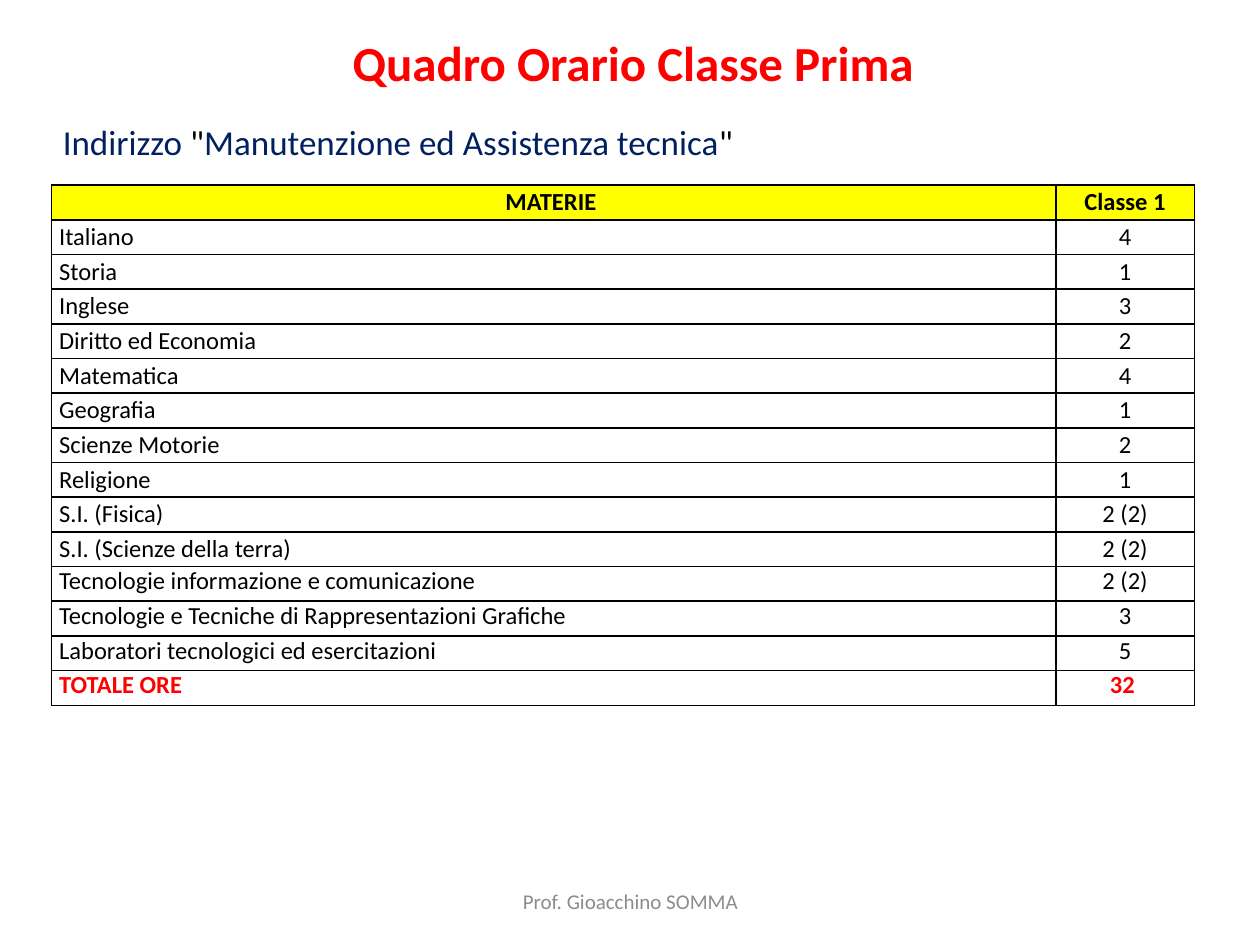
from lxml.etree import SubElement
from pptx import Presentation
from pptx.dml.color import RGBColor
from pptx.enum.text import MSO_ANCHOR, MSO_AUTO_SIZE, PP_ALIGN
from pptx.oxml.ns import qn
from pptx.util import Pt

# Content
TITLE = "Quadro Orario Classe Prima"
FOOTER = "Prof. Gioacchino SOMMA"
HEADER = ("MATERIE ", "Classe 1")
SUBJECTS = [
    ("Italiano", "4"),
    ("Storia", "1"),
    ("Inglese", "3"),
    ("Diritto ed Economia", "2"),
    ("Matematica", "4"),
    ("Geografia", "1"),
    ("Scienze Motorie", "2"),
    ("Religione", "1"),
    ("S.I. (Fisica)", "2 (2)"),
    ("S.I. (Scienze della terra)", "2 (2)"),
    ("Tecnologie informazione e comunicazione", "2 (2)"),
    ("Tecnologie e Tecniche di Rappresentazioni Grafiche", "3"),
    ("Laboratori tecnologici ed esercitazioni", "5"),
]
TOTAL = ("TOTALE ORE", "32 ")
FIRST_TOP_ROW = 11  # from this row on, text sits at the top of its cell

# Style
FONT = "Calibri"
BLACK = RGBColor(0x00, 0x00, 0x00)
RED = RGBColor(0xFF, 0x00, 0x00)
NAVY = RGBColor(0x00, 0x20, 0x60)
GREY = RGBColor(0x8C, 0x8C, 0x8C)
YELLOW = RGBColor(0xFF, 0xFF, 0x00)
SUBTITLE = [
    ("Indirizzo ", NAVY),
    ('"', BLACK),
    ("Manutenzione ed Assistenza tecnica", NAVY),
    ('"', BLACK),
]

# Table geometry in points
TABLE_LEFT, TABLE_TOP = 29.5, 105.8
COLUMN_WIDTHS = (573.8, 79.2)
ROW_HEIGHT = 19.83


def write(frame, runs, size, bold=False, align=PP_ALIGN.LEFT, anchor=MSO_ANCHOR.TOP):
    """Fill a text frame with one paragraph of (text, colour) runs."""
    frame.word_wrap = True
    frame.vertical_anchor = anchor
    paragraph = frame.paragraphs[0]
    paragraph.alignment = align
    for text, color in runs:
        run = paragraph.add_run()
        run.text = text
        run.font.name = FONT
        run.font.size = Pt(size)
        run.font.bold = bold
        run.font.color.rgb = color


def place(shape, left, top, width, height):
    shape.left, shape.top = Pt(left), Pt(top)
    shape.width, shape.height = Pt(width), Pt(height)


def add_borders(cell, color, width):
    properties = cell._tc.get_or_add_tcPr()
    for position, side in enumerate(("lnL", "lnR", "lnT", "lnB")):
        line = SubElement(properties, qn(f"a:{side}"), w=str(Pt(width)))
        fill = SubElement(line, qn("a:solidFill"))
        SubElement(fill, qn("a:srgbClr"), val=str(color))
        properties.insert(position, line)


def add_timetable(slide):
    rows = [HEADER, *SUBJECTS, TOTAL]
    table = slide.shapes.add_table(
        len(rows), len(COLUMN_WIDTHS), Pt(TABLE_LEFT), Pt(TABLE_TOP),
        Pt(sum(COLUMN_WIDTHS)), Pt(ROW_HEIGHT * len(rows)),
    ).table
    for column, width in zip(table.columns, COLUMN_WIDTHS):
        column.width = Pt(width)

    for row_index, values in enumerate(rows):
        table.rows[row_index].height = Pt(ROW_HEIGHT)
        is_header, is_total = values is HEADER, values is TOTAL
        for column_index, text in enumerate(values):
            cell = table.cell(row_index, column_index)
            cell.margin_left = cell.margin_right = Pt(4.3)
            cell.margin_top = cell.margin_bottom = Pt(0)
            cell.vertical_anchor = (
                MSO_ANCHOR.TOP if row_index >= FIRST_TOP_ROW else MSO_ANCHOR.MIDDLE
            )
            if is_header:
                cell.fill.solid()
                cell.fill.fore_color.rgb = YELLOW
            else:
                cell.fill.background()
            add_borders(cell, BLACK, 1)
            centred = is_header or column_index == 1
            write(
                cell.text_frame, [(text, RED if is_total else BLACK)], 14,
                bold=is_header or is_total,
                align=PP_ALIGN.CENTER if centred else PP_ALIGN.LEFT,
                anchor=cell.vertical_anchor,
            )


def main():
    presentation = Presentation()
    presentation.slide_width, presentation.slide_height = Pt(720), Pt(540)
    slide = presentation.slides.add_slide(presentation.slide_layouts[5])

    # Title
    title = slide.shapes.title
    place(title, 60.5, 15.1, 602.6, 41)
    write(title.text_frame, [(TITLE, RED)], 28, bold=True, align=PP_ALIGN.CENTER)
    title.text_frame.auto_size = MSO_AUTO_SIZE.NONE

    # Subtitle
    subtitle = slide.shapes.add_textbox(Pt(28.8), Pt(65.5), Pt(643), Pt(31.7))
    write(subtitle.text_frame, SUBTITLE, 20)

    # Timetable
    add_timetable(slide)

    # Footer
    footer = slide.shapes.add_textbox(Pt(246.2), Pt(500.4), Pt(228.2), Pt(28.8))
    write(footer.text_frame, [(FOOTER, GREY)], 12,
          align=PP_ALIGN.CENTER, anchor=MSO_ANCHOR.MIDDLE)

    presentation.save("out.pptx")


if __name__ == "__main__":
    main()
